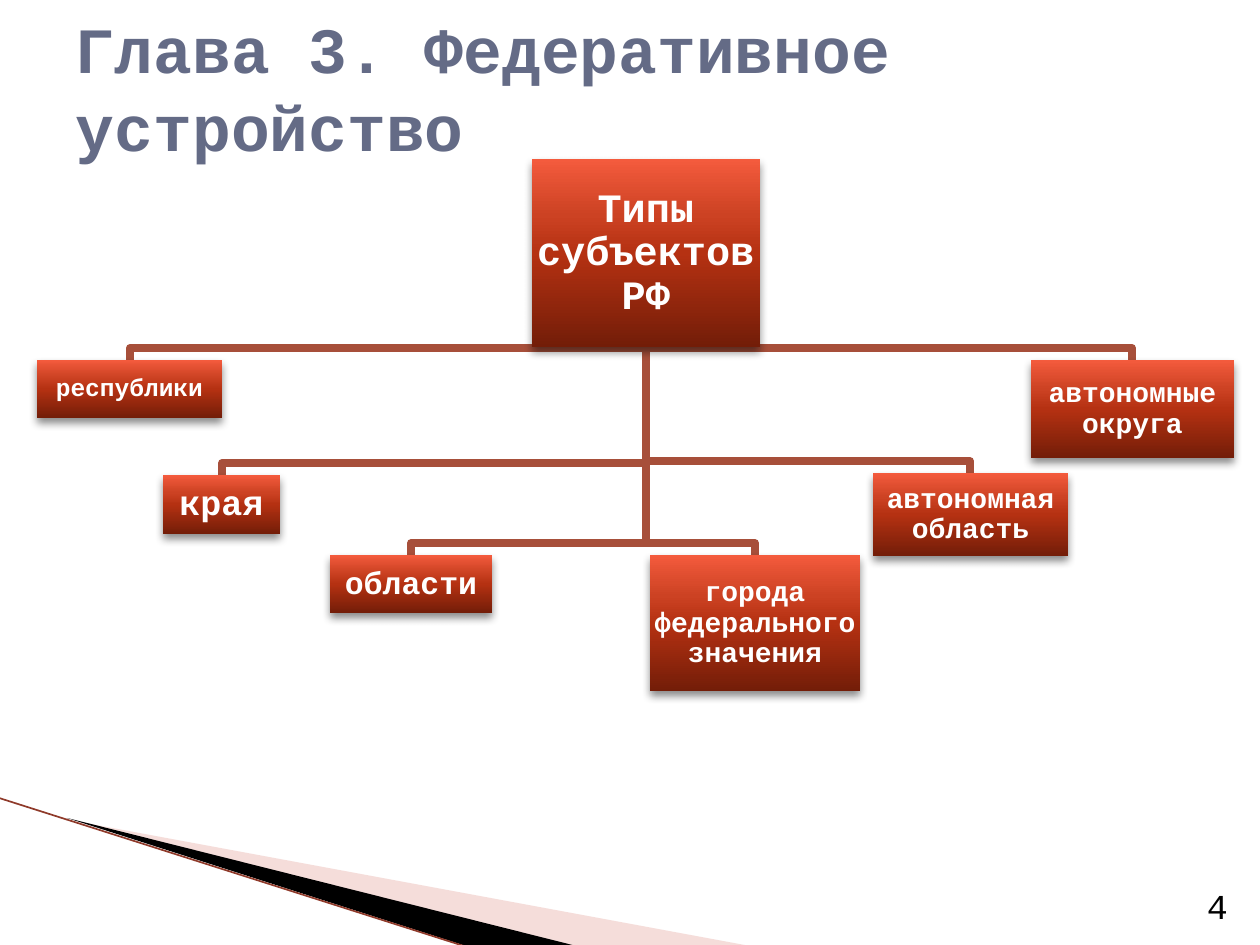
"""Build a slide with the tree of constituent entity types."""
from lxml import etree
from pptx import Presentation
from pptx import util as u
from pptx.dml.color import RGBColor
from pptx.enum import shapes, text
from pptx.oxml import parse_xml
from pptx.oxml.ns import nsdecls, qn

PX = 914400 / 126
FONT = "Courier New"
WHITE, BLACK, SLATE = "FFFFFF", "000000", "646B86"
BRANCH, PINK, EDGE = "A74F3A", "E7ACA4", "8F3A2A"
GRADIENT = [(0, "731D08"), (50, "B53112"), (70, "CC4223"), (100, "F45B3D")]
ROOT = ("Типы субъектов РФ", 532, 159, 228, 188, 23)
CHILDREN = [
    ("республики", 37, 360, 185, 58, 14),
    ("края", 163, 475, 117, 59, 20),
    ("области", 330, 555, 162, 58, 18),
    ("города федерального значения", 650, 555, 210, 136, 16),
    ("автономная область", 873, 473, 195, 83, 16),
    ("автономные округа", 1031, 360, 203, 98, 16),
]
BUS_GAP = 12


def px(value):
    return u.Emu(round(value * PX))


def color(value):
    return RGBColor.from_string(value)


class SlideBuilder:
    """Holds the style and the current slide."""

    def __init__(self, presentation):
        self.slide = presentation.slides.add_slide(presentation.slide_layouts[5])
        self.shapes = self.slide.shapes

    def place(self, shape, left, top, width, height):
        shape.left, shape.top = px(left), px(top)
        shape.width, shape.height = px(width), px(height)

    def set_text(self, shape, words, size, hue, align, anchor, bold=True, inset=0):
        frame = shape.text_frame
        frame.word_wrap = True
        frame.auto_size = text.MSO_AUTO_SIZE.NONE
        frame.vertical_anchor = anchor
        frame.margin_left = frame.margin_right = px(inset)
        frame.margin_top = frame.margin_bottom = px(inset)
        frame.text = words
        paragraph = frame.paragraphs[0]
        paragraph.alignment = align
        font = paragraph.font
        font.name, font.size, font.bold = FONT, u.Pt(size), bold
        font.color.rgb = color(hue)
        return paragraph

    def title(self, words, left, top, width, height):
        shape = self.shapes.title
        self.place(shape, left, top, width, height)
        paragraph = self.set_text(shape, words, 36.9, SLATE, text.PP_ALIGN.LEFT,
                                  text.MSO_ANCHOR.MIDDLE, inset=13)
        paragraph.line_spacing = u.Pt(44.6)
        shape.text_frame.margin_top = 0
        shape.text_frame.margin_bottom = px(60)

    def label(self, words, left, top, width, height, size):
        shape = self.shapes.add_textbox(0, 0, 0, 0)
        self.place(shape, left, top, width, height)
        self.set_text(shape, words, size, BLACK, text.PP_ALIGN.RIGHT,
                      text.MSO_ANCHOR.BOTTOM, bold=False, inset=6)

    def freeform(self, points, closed):
        builder = self.shapes.build_freeform(*points[0], scale=PX)
        builder.add_line_segments(points[1:], close=closed)
        shape = builder.convert_to_shape()
        shape.shadow.inherit = False
        return shape

    def wedge(self, points, hue, opacity=100):
        shape = self.freeform(points, True)
        shape.fill.solid()
        shape.fill.fore_color.rgb = color(hue)
        shape.line.fill.background()
        if opacity < 100:
            srgb = shape._element.spPr.find(".//" + qn("a:srgbClr"))
            etree.SubElement(srgb, qn("a:alpha"), val=str(opacity * 1000))

    def line(self, x1, y1, x2, y2, hue, width):
        connector = self.shapes.add_connector(
            shapes.MSO_CONNECTOR.STRAIGHT, px(x1), px(y1), px(x2), px(y2))
        connector.line.color.rgb = color(hue)
        connector.line.width = u.Pt(width)
        etree.SubElement(connector._element.spPr, qn("a:effectLst"))

    def branch(self, parent, child):
        start_x, start_y = parent[1] + parent[3] / 2, parent[2] + parent[4]
        end_x, end_y = child[1] + child[3] / 2, child[2]
        bus = end_y - BUS_GAP
        shape = self.freeform([(start_x, start_y), (start_x, bus),
                               (end_x, bus), (end_x, end_y)], False)
        shape.fill.background()
        shape.line.color.rgb = color(BRANCH)
        shape.line.width = u.Pt(4.33)

    def node(self, words, left, top, width, height, size):
        shape = self.shapes.add_shape(shapes.MSO_SHAPE.RECTANGLE, 0, 0, 0, 0)
        self.place(shape, left, top, width, height)
        shape.line.fill.background()
        shape.shadow.inherit = False
        properties = shape._element.spPr
        stops = "".join(
            f'<a:gs pos="{position * 1000}"><a:srgbClr val="{hue}"/></a:gs>'
            for position, hue in GRADIENT)
        properties.find(qn("a:prstGeom")).addnext(parse_xml(
            f'<a:gradFill {nsdecls("a")} rotWithShape="1"><a:gsLst>{stops}</a:gsLst>'
            '<a:lin ang="16200000" scaled="0"/></a:gradFill>'))
        properties.find(qn("a:effectLst")).append(parse_xml(
            f'<a:outerShdw {nsdecls("a")} blurRad="{u.Pt(5)}" dist="{u.Pt(3)}" '
            'dir="5400000" rotWithShape="0"><a:srgbClr val="000000">'
            '<a:alpha val="45000"/></a:srgbClr></a:outerShdw>'))
        paragraph = self.set_text(shape, words, size, WHITE, text.PP_ALIGN.CENTER,
                                  text.MSO_ANCHOR.MIDDLE, inset=1)
        paragraph.line_spacing = 0.9


def main():
    presentation = Presentation()
    presentation.slide_width, presentation.slide_height = px(1260), px(945)
    builder = SlideBuilder(presentation)
    builder.wedge([(69, 820), (750, 946), (575, 946)], PINK, 40)
    builder.wedge([(67, 818), (576, 946), (469, 947)], BLACK)
    builder.line(-1, 798, 467, 947, EDGE, 0.95)
    builder.title("Глава 3. Федеративное устройство", 63, 38, 1197, 157)
    for child in reversed(CHILDREN):
        builder.branch(ROOT, child)
    for node in [ROOT, *CHILDREN]:
        builder.node(*node)
    builder.label("4", 1184, 883, 50, 50, 20)
    presentation.save("out.pptx")


if __name__ == "__main__":
    main()
